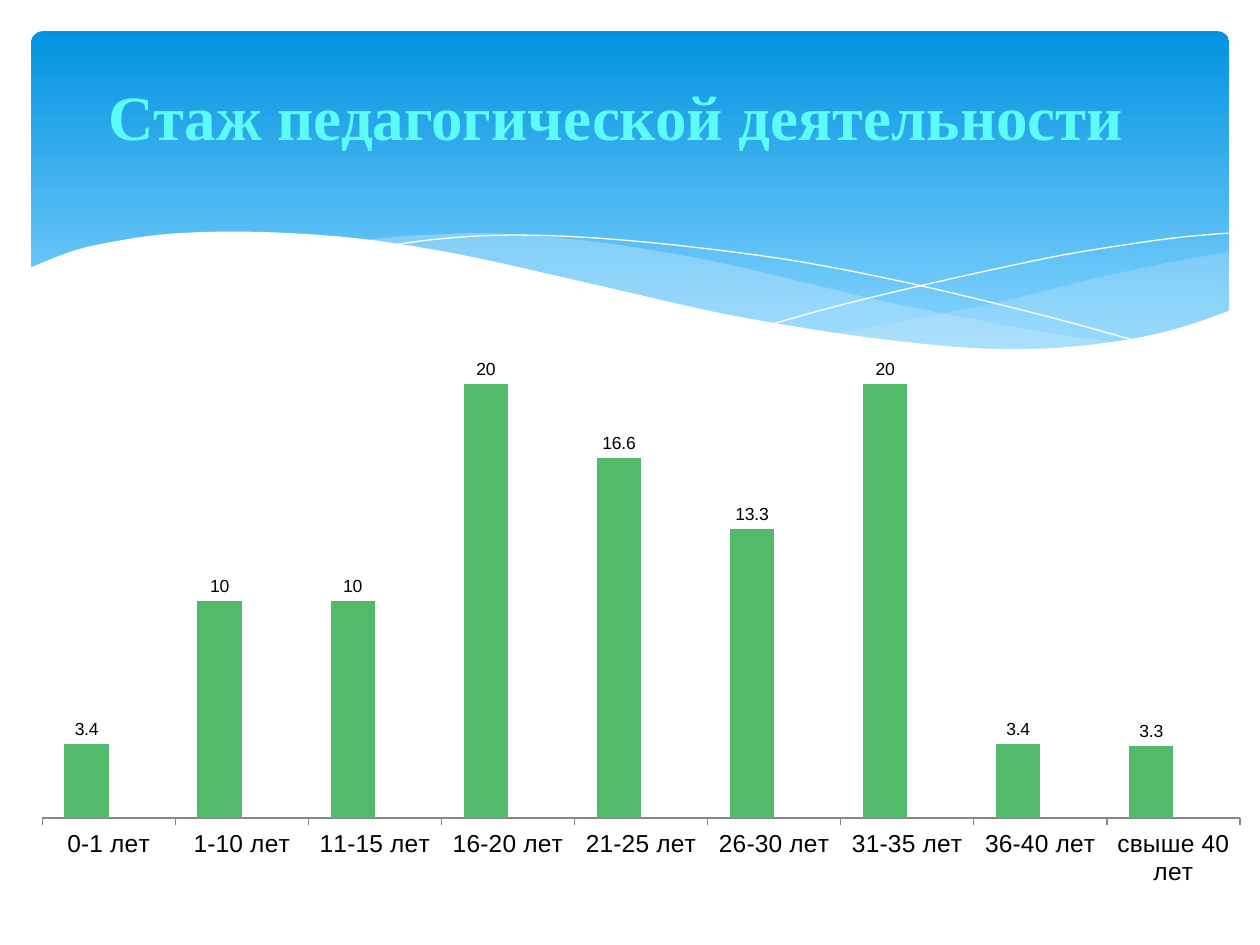
from lxml.etree import SubElement
from pptx import Presentation
from pptx.chart.data import CategoryChartData
from pptx.dml.color import RGBColor
from pptx.enum.chart import XL_CHART_TYPE, XL_LABEL_POSITION, XL_TICK_LABEL_POSITION, XL_TICK_MARK
from pptx.enum.shapes import MSO_SHAPE
from pptx.enum.text import MSO_ANCHOR, PP_ALIGN
from pptx.oxml import parse_xml
from pptx.oxml.ns import nsdecls, qn
from pptx.util import Cm, Pt

WHITE = RGBColor(0xFF, 0xFF, 0xFF)
BLACK = RGBColor(0, 0, 0)
GRAY = RGBColor(0x87, 0x87, 0x87)
GREEN = RGBColor(0x52, 0xBA, 0x6B)
BLUE = RGBColor(0x45, 0x84, 0xD3)
DEEP_SKY = RGBColor(0x02, 0x93, 0xE0)
LIGHT_SKY = RGBColor(0x83, 0xD3, 0xFE)
PALE_SKY = RGBColor(0xC6, 0xE7, 0xFC)
AQUA = RGBColor(0x5A, 0xFB, 0xF8)

RIGHT_WAVE = [
    [(24.79, 5.08), (23.75, 5.26), (22.63, 5.49), (21.87, 5.66), (20.45, 6.02),
     (19.13, 6.3), (17.93, 6.53), (16.79, 6.73)],
    [(16.79, 6.73), (17.91, 6.88), (19.23, 7.01), (20.68, 7.06), (21.92, 6.99),
     (22.99, 6.83), (23.93, 6.58), (24.79, 6.27)],
]
MIDDLE_WAVE = [
    [(22.68, 6.93), (21.26, 6.73), (19.69, 6.45), (17.93, 6.1), (15.98, 5.64), (14.45, 5.28),
     (13.06, 5.03), (11.81, 4.85), (10.67, 4.75), (9.65, 4.7), (8.33, 4.75), (7.26, 4.85)],
    [(7.26, 4.85), (8.69, 5.05), (10.26, 5.36), (11.4, 5.64), (13.46, 6.1), (15.27, 6.48),
     (16.89, 6.76), (18.34, 6.96), (19.63, 7.04), (20.78, 7.06), (21.77, 7.04), (22.68, 6.93)],
]
FALLING_LINE = [
    [(7.85, 4.95), (8.74, 4.83), (9.83, 4.75), (11, 4.75), (12.42, 4.83), (14.12, 5),
     (16.15, 5.28), (18.47, 5.74), (21.11, 6.38), (23.04, 6.91)],
]
RISING_LINE = [
    [(15.57, 6.53), (17.07, 6.12), (19, 5.66), (21.23, 5.18), (22.73, 4.93),
     (23.83, 4.78), (24.77, 4.7)],
]
FRONT_WAVE = [
    [(24.82, 6.25), (23.88, 6.58), (22.83, 6.83), (21.59, 6.99), (20.32, 7.04), (18.9, 6.96),
     (16.97, 6.73), (14.71, 6.35), (12.78, 5.92), (11.35, 5.59), (9.27, 5.13), (7.42, 4.83),
     (5.84, 4.7), (4.5, 4.67), (3.35, 4.72), (2.41, 4.85), (1.5, 5.05), (0.58, 5.41)],
    [(0.58, 8.36)],
    [(24.82, 8.36)],
]
EXPERIENCE = {
    "0-1 лет": 3.4, "1-10 лет": 10, "11-15 лет": 10, "16-20 лет": 20, "21-25 лет": 16.6,
    "26-30 лет": 13.3, "31-35 лет": 20, "36-40 лет": 3.4, "свыше 40 лет": 3.3,
}
PLOT_LAYOUT = {"x": 0.022, "y": 0, "w": 0.962, "h": 0.892}


def set_all(target, values):
    for name, value in values.items():
        setattr(target, name, value)


def smooth_curve(points, steps=5):
    padded = [points[0], *points, points[-1]]
    curve = [points[0]]
    for a, b, c, d in zip(padded, padded[1:], padded[2:], padded[3:]):
        for step in range(1, steps + 1):
            t = step / steps
            curve.append(tuple(
                q + t * (r - p) / 2 + t**2 * (2 * p - 5 * q + 4 * r - s) / 2
                + t**3 * (3 * q - p - 3 * r + s) / 2
                for p, q, r, s in zip(a, b, c, d)))
    return curve


class SlideBuilder:
    title_font = {"name": "Times New Roman", "size": Pt(36), "bold": True}
    axis_font = {"name": "Arial", "size": Pt(14)}
    label_font = {"name": "Arial", "size": Pt(10)}

    def __init__(self, slide):
        self.slide = slide

    def banner(self, left, top, width, height):
        shape = self.slide.shapes.add_shape(
            MSO_SHAPE.ROUNDED_RECTANGLE, Cm(left), Cm(top), Cm(width), Cm(height))
        shape.adjustments[0] = 0.034
        shape.shadow.inherit = False
        shape.line.fill.background()
        shape.fill.gradient()
        shape.fill.gradient_angle = 270
        stops = zip(shape.fill.gradient_stops, (0, 0.9), (DEEP_SKY, LIGHT_SKY))
        for stop, position, color in stops:
            stop.position = position
            stop.color.rgb = color

    def outline(self, curves, closed):
        points = [(Cm(x), Cm(y)) for curve in curves for x, y in smooth_curve(curve)]
        builder = self.slide.shapes.build_freeform(*points[0])
        builder.add_line_segments(points[1:], close=closed)
        shape = builder.convert_to_shape()
        shape.shadow.inherit = False
        return shape

    def wave(self, curves, color, opacity=100):
        shape = self.outline(curves, True)
        shape.line.fill.background()
        shape.fill.solid()
        shape.fill.fore_color.rgb = color
        if opacity < 100:
            color_element = shape.fill._xPr.find(qn("a:solidFill"))[0]
            SubElement(color_element, qn("a:alpha"), val=str(opacity * 1000))

    def curved_line(self, curves):
        shape = self.outline(curves, False)
        shape.fill.background()
        shape.line.color.rgb = WHITE
        shape.line.width = Pt(0)

    def title(self, text, left, top, width, height):
        frame = self.slide.shapes.add_textbox(
            Cm(left), Cm(top), Cm(width), Cm(height)).text_frame
        set_all(frame, {"word_wrap": True, "vertical_anchor": MSO_ANCHOR.MIDDLE})
        paragraph = frame.paragraphs[0]
        set_all(paragraph, {"text": text, "alignment": PP_ALIGN.CENTER, "space_before": Pt(7.2)})
        set_all(paragraph.runs[0].font, self.title_font)
        paragraph.runs[0].font.color.rgb = AQUA

    def column_chart(self, values, left, top, width, height):
        data = CategoryChartData()
        data.categories = list(values)
        data.add_series("Series 1", list(values.values()))
        data.add_series("Series 2", [None] * len(values))
        chart = self.slide.shapes.add_chart(
            XL_CHART_TYPE.COLUMN_CLUSTERED, Cm(left), Cm(top), Cm(width), Cm(height), data).chart
        set_all(chart, {"has_legend": False, "has_title": False})
        set_all(chart.font, {"name": "Calibri", "size": Pt(18)})
        chart.font.color.rgb = BLACK
        set_all(chart.value_axis, {
            "visible": False, "has_major_gridlines": False,
            "minimum_scale": 0, "maximum_scale": 25})
        axis = chart.category_axis
        set_all(axis, {
            "major_tick_mark": XL_TICK_MARK.OUTSIDE,
            "tick_label_position": XL_TICK_LABEL_POSITION.LOW})
        axis.format.line.color.rgb = GRAY
        set_all(axis.tick_labels.font, self.axis_font)
        plot = chart.plots[0]
        set_all(plot, {"gap_width": 100, "overlap": 0, "vary_by_categories": False})
        for series, color in zip(plot.series, (GREEN, BLUE)):
            series.format.fill.solid()
            series.format.fill.fore_color.rgb = color
            labels = series.data_labels
            set_all(labels, {"show_value": True, "position": XL_LABEL_POSITION.OUTSIDE_END})
            set_all(labels.font, self.label_font)
        self.place_plot(chart)

    def place_plot(self, chart):
        plot_area = chart._chartSpace.chart.plotArea
        for layout in plot_area.findall(qn("c:layout")):
            plot_area.remove(layout)
        modes = "".join(f'<c:{axis}Mode val="edge"/>' for axis in "xy")
        sizes = "".join(f'<c:{name} val="{size}"/>' for name, size in PLOT_LAYOUT.items())
        plot_area.insert(0, parse_xml(
            f'<c:layout {nsdecls("c")}><c:manualLayout><c:layoutTarget val="inner"/>'
            f'{modes}{sizes}</c:manualLayout></c:layout>'))


def main():
    presentation = Presentation()
    set_all(presentation, {"slide_width": Cm(25.4), "slide_height": Cm(19.05)})
    builder = SlideBuilder(presentation.slides.add_slide(presentation.slide_layouts[6]))
    builder.banner(0.63, 0.63, 24.15, 6.86)
    builder.wave(RIGHT_WAVE, PALE_SKY, 29)
    builder.wave(MIDDLE_WAVE, PALE_SKY, 40)
    builder.curved_line(FALLING_LINE)
    builder.curved_line(RISING_LINE)
    builder.wave(FRONT_WAVE, WHITE)
    builder.title("Стаж педагогической деятельности", 0.99, 0.58, 22.86, 3.48)
    builder.column_chart(EXPERIENCE, 0.3, 5.56, 25.1, 12.29)
    presentation.save("out.pptx")


if __name__ == "__main__":
    main()
